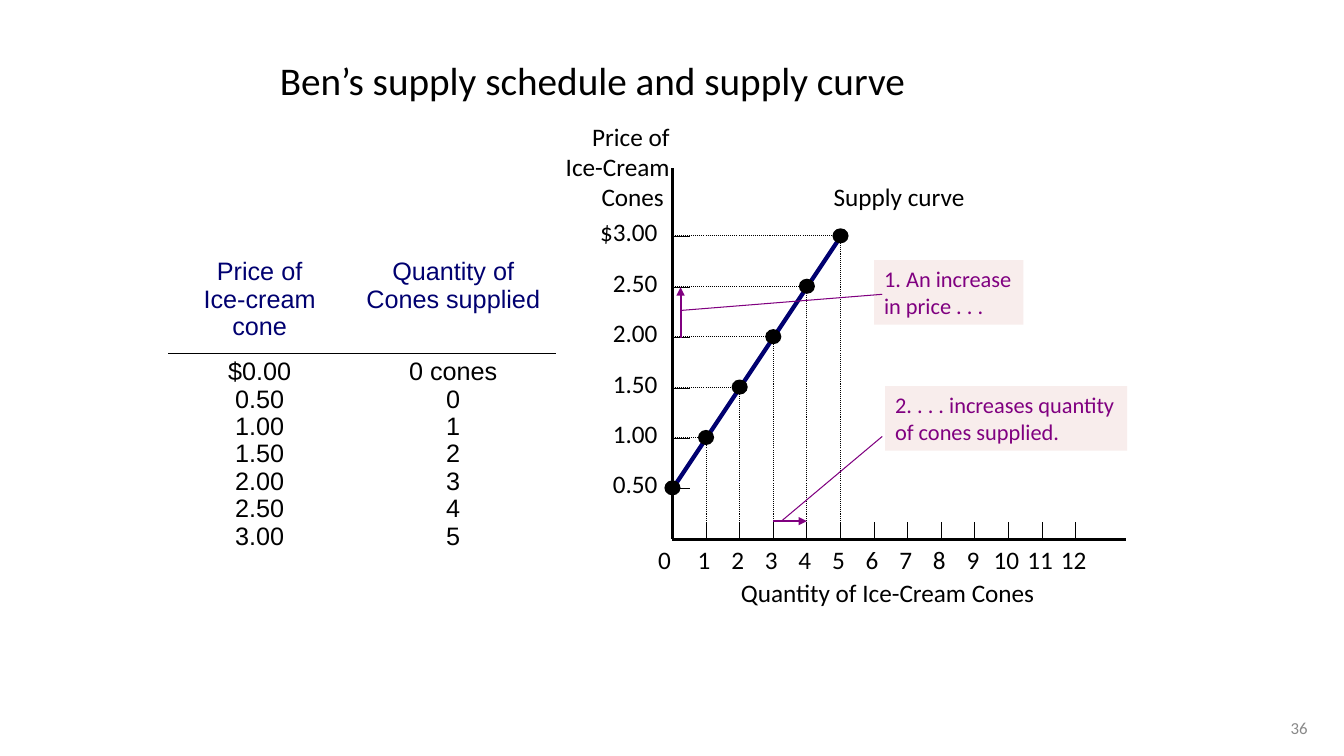
from lxml import etree
from pptx import Presentation
from pptx.dml.color import RGBColor
from pptx.enum.dml import MSO_LINE
from pptx.enum.shapes import MSO_CONNECTOR, MSO_SHAPE
from pptx.enum.text import MSO_ANCHOR, PP_ALIGN
from pptx.oxml.ns import qn
from pptx.util import Inches, Pt

LEFT, CENTER, RIGHT = PP_ALIGN.LEFT, PP_ALIGN.CENTER, PP_ALIGN.RIGHT
TOP, MIDDLE = MSO_ANCHOR.TOP, MSO_ANCHOR.MIDDLE
DOTTED = MSO_LINE.ROUND_DOT
STRAIGHT = MSO_CONNECTOR.STRAIGHT
RECTANGLE, OVAL = MSO_SHAPE.RECTANGLE, MSO_SHAPE.OVAL

# Content
TITLE = "Ben’s supply schedule and supply curve"
PAGE_NUMBER = "36"
SCHEDULE = [
    (["Price of", "Ice-cream cone"], ["Quantity of", "Cones supplied"]),
    (["$0.00", "0.50", "1.00", "1.50", "2.00", "2.50", "3.00"],
     ["0 cones", "0", "1", "2", "3", "4", "5"]),
]
PRICE_AXIS_TITLE = ["Price of", " Ice-Cream", "Cones "]
QUANTITY_AXIS_TITLE = "Quantity of Ice-Cream Cones"
CURVE_NAME = "Supply curve"
SUPPLY = [(0, 0.5), (1, 1.0), (2, 1.5), (3, 2.0), (4, 2.5), (5, 3.0)]
MAX_QUANTITY = 12
CALLOUTS = [  # lines of text, box, leader start, leader end
    (["1. An increase", "in price . . ."],
     (8.67, 2.58, 1.48, 0.64), (6.75, 3.08), (8.75, 2.92)),
    (["2. . . . increases quantity", "of cones supplied."],
     (8.78, 3.83, 2.4, 0.64), (7.75, 5.17), (8.75, 4.33)),
]

THEME = {
    "font": "Calibri", "table_font": "Arial",
    "ink": "000000", "navy": "000070", "accent": "800080",
    "callout": "F8EDEC", "muted": "898989",
    "title": 28, "body": 18, "note": 16, "small": 12,
}

# Plot geometry
ORIGIN_X, ORIGIN_Y = 6.67, 5.35
QUANTITY_STEP = 1 / 3
TICK = 0.17
LABEL_H = 0.4
DOT_W, DOT_H = 0.16, 0.15


def plot_x(quantity):
    return ORIGIN_X + quantity * QUANTITY_STEP


def plot_y(price):
    return ORIGIN_Y - price


def color(name):
    return RGBColor.from_string(THEME[name])


def write(frame, lines, size="body", ink="ink", font="font", align=LEFT,
          anchor=TOP, wrap=False, spacing=None):
    frame.word_wrap = wrap
    frame.vertical_anchor = anchor
    for i, line in enumerate([lines] if isinstance(lines, str) else lines):
        paragraph = frame.paragraphs[0] if i == 0 else frame.add_paragraph()
        paragraph.alignment = align
        paragraph.line_spacing = spacing
        run = paragraph.add_run()
        run.text = line
        run.font.name = THEME[font]
        run.font.size = Pt(THEME[size])
        run.font.color.rgb = color(ink)


def add_text(box, lines, **style):
    label = slide.shapes.add_textbox(*map(Inches, box))
    write(label.text_frame, lines, **style)


def add_block(kind, box, fill):
    block = slide.shapes.add_shape(kind, *map(Inches, box))
    block.shadow.inherit = False
    block.fill.solid()
    block.fill.fore_color.rgb = color(fill)
    block.line.fill.background()
    return block


def add_line(start, end, ink="ink", width=0.75, dash=None, arrow=False):
    connector = slide.shapes.add_connector(STRAIGHT, *map(Inches, start + end))
    connector.line.color.rgb = color(ink)
    connector.line.width = Pt(width)
    if dash:
        connector.line.dash_style = dash
    if arrow:
        etree.SubElement(connector.line._get_or_add_ln(), qn("a:tailEnd"), type="triangle")
    etree.SubElement(connector._element.spPr, qn("a:effectLst"))


def set_borders(cell, ruled):
    """Rule one side of a cell and clear the other three."""
    properties = cell._tc.get_or_add_tcPr()
    for position, side in enumerate(("lnL", "lnR", "lnT", "lnB")):
        border = etree.Element(qn("a:" + side), w=str(Pt(1)))
        if side == ruled:
            fill = etree.SubElement(border, qn("a:solidFill"))
            etree.SubElement(fill, qn("a:srgbClr"), val=THEME["ink"])
        else:
            etree.SubElement(border, qn("a:noFill"))
        properties.insert(position, border)


deck = Presentation()
deck.slide_width, deck.slide_height = Inches(13.33), Inches(7.5)
slide = deck.slides.add_slide(deck.slide_layouts[6])

# Title and page number
add_text((2, 0.5, 7.75, 0.58), TITLE, size="title", align=CENTER, anchor=MIDDLE, wrap=True)
add_text((12.44, 7.02, 0.89, 0.4), PAGE_NUMBER, size="small", ink="muted",
         align=CENTER, anchor=MIDDLE, wrap=True)

# Supply curve and its name
add_line((plot_x(SUPPLY[0][0]), plot_y(SUPPLY[0][1])),
         (plot_x(SUPPLY[-1][0]), plot_y(SUPPLY[-1][1])), ink="navy", width=3)
add_text((8.17, 1.75, 1.51, LABEL_H), CURVE_NAME)

# Supply schedule
schedule = slide.shapes.add_table(2, 2, *map(Inches, (1.67, 2.52, 3.84, 3.19))).table
schedule.first_row = schedule.horz_banding = False
for column, width in zip(schedule.columns, (1.81, 2.03)):
    column.width = Inches(width)
for row, height in zip(schedule.rows, (0.99, 2.2)):
    row.height = Inches(height)
for r, (entries, ink, ruled) in enumerate(zip(SCHEDULE, ("navy", "ink"), ("lnB", "lnT"))):
    for c, lines in enumerate(entries):
        cell = schedule.cell(r, c)
        cell.fill.background()
        write(cell.text_frame, lines, ink=ink, font="table_font", align=CENTER,
              wrap=True, spacing=0.97)
        set_borders(cell, ruled)

# Quantity axis
add_line((ORIGIN_X, ORIGIN_Y), (11.17, ORIGIN_Y), width=2.25)
add_text((6.42, ORIGIN_Y, 0.34, LABEL_H), "0", align=CENTER)
for quantity in range(1, MAX_QUANTITY + 1):
    x = plot_x(quantity)
    add_line((x, ORIGIN_Y - TICK), (x, ORIGIN_Y))
    add_text((x - 0.25, ORIGIN_Y, 0.46, LABEL_H), str(quantity), align=CENTER)
add_text((7.25, 5.68, 3.21, LABEL_H), QUANTITY_AXIS_TITLE)

# Price axis
add_line((ORIGIN_X, 1.67), (ORIGIN_X, ORIGIN_Y), width=2.25)
add_text((5.44, 1.15, 1.3, 1.01), PRICE_AXIS_TITLE, align=RIGHT)
for _, price in SUPPLY:
    y = plot_y(price)
    unit = "$" if price == SUPPLY[-1][1] else ""
    add_line((ORIGIN_X, y), (ORIGIN_X + TICK, y))
    add_text((5.84, y - 0.25, 0.78, LABEL_H), f"{unit}{price:.2f}", align=RIGHT)

# Guides and points
for quantity, price in SUPPLY:
    x, y = plot_x(quantity), plot_y(price) - 0.01
    if quantity:
        add_line((ORIGIN_X, y), (x, y), dash=DOTTED)
        add_line((x, ORIGIN_Y), (x, y), dash=DOTTED)
    add_block(OVAL, (x - DOT_W / 2, y - DOT_H / 2, DOT_W, DOT_H), "ink")

# Movement arrows: price 2.00 to 2.50, quantity 3 to 4
add_line((6.75, plot_y(2)), (6.75, plot_y(2.5)), ink="accent", width=1.5, arrow=True)
add_line((plot_x(3), 5.17), (plot_x(4), 5.17), ink="accent", width=1.5, arrow=True)

# Callouts
for lines, box, start, end in CALLOUTS:
    write(add_block(RECTANGLE, box, "callout").text_frame, lines, size="note", ink="accent")
    add_line(start, end, ink="accent")

deck.save("out.pptx")
